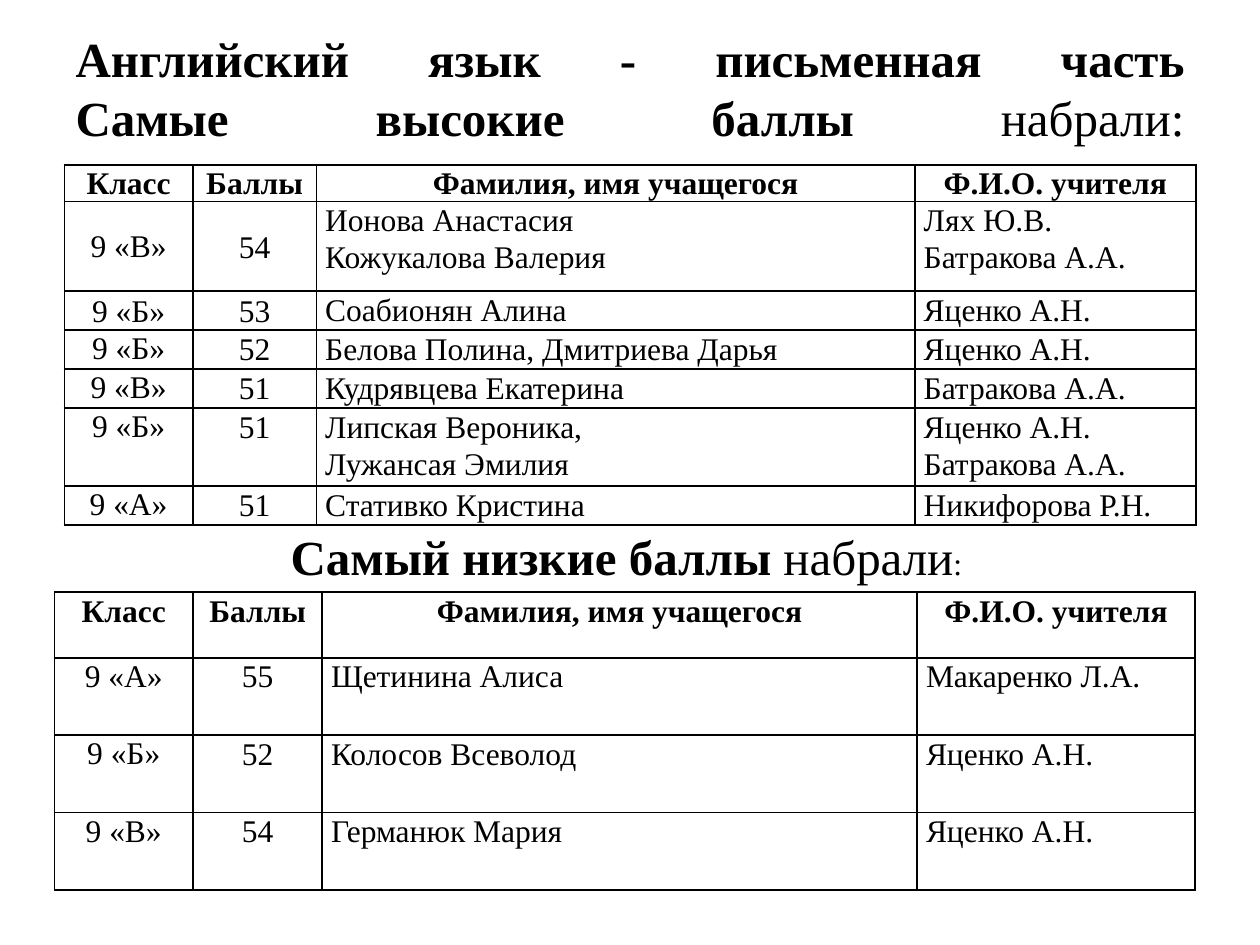
from lxml.etree import SubElement
from pptx import Presentation
from pptx.dml.color import RGBColor
from pptx.enum.text import MSO_ANCHOR as Anchor, MSO_AUTO_SIZE as AutoSize, PP_ALIGN as Align
from pptx.oxml.ns import qn
from pptx.util import Pt

COLORS = {"text": "000000", "border": "000000"}
FONT = "Times New Roman"
HEADING_SIZE, CELL_SIZE = 28, 18
BORDER_WIDTH = 1
CELL_MARGINS = {"margin_left": 5.1, "margin_right": 5.1, "margin_top": 0, "margin_bottom": 0}

# Each line of the title is a list of (text, bold); it ends in a break, which keeps it justified.
TITLE_LINES = [
    [("Английский язык - письменная часть", True)],
    [("Самые высокие баллы ", True), ("набрали:", False)],
]
TITLE_BOX = (36, 21.6, 648, 90)
LOWEST_HEADING = [
    ("Самый низкие баллы", True, HEADING_SIZE),
    (" набрали", False, HEADING_SIZE),
    (":", False, CELL_SIZE),
]
LOWEST_HEADING_BOX = (159, 297.4, 402.6, 41.2)

HEADER = ("Класс", "Баллы", "Фамилия, имя учащегося", "Ф.И.О. учителя")
HIGHEST = {
    "position": (36.8, 94.3),
    "widths": (73.4, 70.6, 342, 160.6),
    "heights": (18.7, 51.1, 22.3, 22.3, 22.3, 44.6, 22.3),
    "middle_rows": (1, 2),
    "rows": [
        ("9 «В»", "54", "Ионова Анастасия\nКожукалова Валерия", "Лях Ю.В.\nБатракова А.А."),
        ("9 «Б»", "53", "Соабионян Алина", "Яценко А.Н."),
        ("9 «Б»", "52", "Белова Полина, Дмитриева Дарья", "Яценко А.Н."),
        ("9 «В»", "51", "Кудрявцева Екатерина", "Батракова А.А."),
        ("9 «Б»", "51", "Липская Вероника,\nЛужансая Эмилия", "Яценко А.Н.\nБатракова А.А."),
        ("9 «А»", "51", "Стативко Кристина", "Никифорова Р.Н."),
    ],
}
LOWEST = {
    "position": (31, 338.4),
    "widths": (79.4, 73.7, 340, 158.9),
    "heights": (37.5, 44.2, 44.2, 44.2),
    "middle_rows": (),
    "rows": [
        ("9 «А»", "55", "Щетинина Алиса", "Макаренко Л.А."),
        ("9 «Б»", "52", "Колосов Всеволод", "Яценко А.Н."),
        ("9 «В»", "54", "Германюк Мария", "Яценко А.Н."),
    ],
}


def format_run(run, size, bold):
    for name, value in {"name": FONT, "size": Pt(size), "bold": bold}.items():
        setattr(run.font, name, value)
    run.font.color.rgb = RGBColor.from_string(COLORS["text"])


def add_run(paragraph, text, size, bold):
    run = paragraph.add_run()
    run.text = text
    format_run(run, size, bold)


def add_borders(cell):
    properties = cell._tc.get_or_add_tcPr()
    for position, tag in enumerate(("a:lnL", "a:lnR", "a:lnT", "a:lnB")):
        line = properties.makeelement(qn(tag), {"w": str(Pt(BORDER_WIDTH))})
        properties.insert(position, line)
        fill = SubElement(line, qn("a:solidFill"))
        SubElement(fill, qn("a:srgbClr"), val=COLORS["border"])


def fill_cell(cell, text, row, column, middle):
    is_header = row == 0
    for name, value in CELL_MARGINS.items():
        setattr(cell, name, Pt(value))
    cell.vertical_anchor = Anchor.MIDDLE if middle else Anchor.TOP
    cell.fill.background()
    add_borders(cell)
    cell.text_frame.text = text
    for paragraph in cell.text_frame.paragraphs:
        paragraph.alignment = Align.CENTER if is_header or column < 2 else Align.JUSTIFY
        paragraph.line_spacing = 1.05 if is_header or column == 0 else 1.06
        format_run(paragraph.runs[0], CELL_SIZE, is_header)


def add_score_table(slide, scores):
    rows = [HEADER] + scores["rows"]
    widths, heights = scores["widths"], scores["heights"]
    box = (*scores["position"], sum(widths), sum(heights))
    table = slide.shapes.add_table(len(rows), len(HEADER), *map(Pt, box)).table
    table.first_row = table.horz_banding = False
    for column, width in zip(table.columns, widths):
        column.width = Pt(width)
    for row, height in zip(table.rows, heights):
        row.height = Pt(height)
    for r, texts in enumerate(rows):
        for c, text in enumerate(texts):
            middle = c < 2 and r in scores["middle_rows"]
            fill_cell(table.cell(r, c), text, r, c, middle)


def set_title(title):
    title.left, title.top, title.width, title.height = map(Pt, TITLE_BOX)
    frame = title.text_frame
    frame.auto_size = AutoSize.NONE
    frame.vertical_anchor = Anchor.MIDDLE
    paragraph = frame.paragraphs[0]
    paragraph.alignment = Align.JUSTIFY
    for line in TITLE_LINES:
        for text, bold in line:
            add_run(paragraph, text, HEADING_SIZE, bold)
        paragraph.add_line_break()
    # The breaks take the heading size, so that all lines are equally high.
    paragraph.font.size = Pt(HEADING_SIZE)
    for line_break in paragraph._p.findall(qn("a:br")):
        SubElement(line_break, qn("a:rPr"), sz=str(HEADING_SIZE * 100))
    SubElement(paragraph._p, qn("a:endParaRPr"), sz=str(HEADING_SIZE * 100))


def add_lowest_heading(slide):
    frame = slide.shapes.add_textbox(*map(Pt, LOWEST_HEADING_BOX)).text_frame
    frame.word_wrap = False
    frame.auto_size = AutoSize.SHAPE_TO_FIT_TEXT
    paragraph = frame.paragraphs[0]
    paragraph.alignment = Align.JUSTIFY
    for text, bold, size in LOWEST_HEADING:
        add_run(paragraph, text, size, bold)


def main():
    presentation = Presentation()
    presentation.slide_width, presentation.slide_height = Pt(720), Pt(540)
    slide = presentation.slides.add_slide(presentation.slide_layouts[5])
    set_title(slide.shapes.title)
    add_score_table(slide, HIGHEST)
    add_lowest_heading(slide)
    add_score_table(slide, LOWEST)
    presentation.save("out.pptx")


if __name__ == "__main__":
    main()
